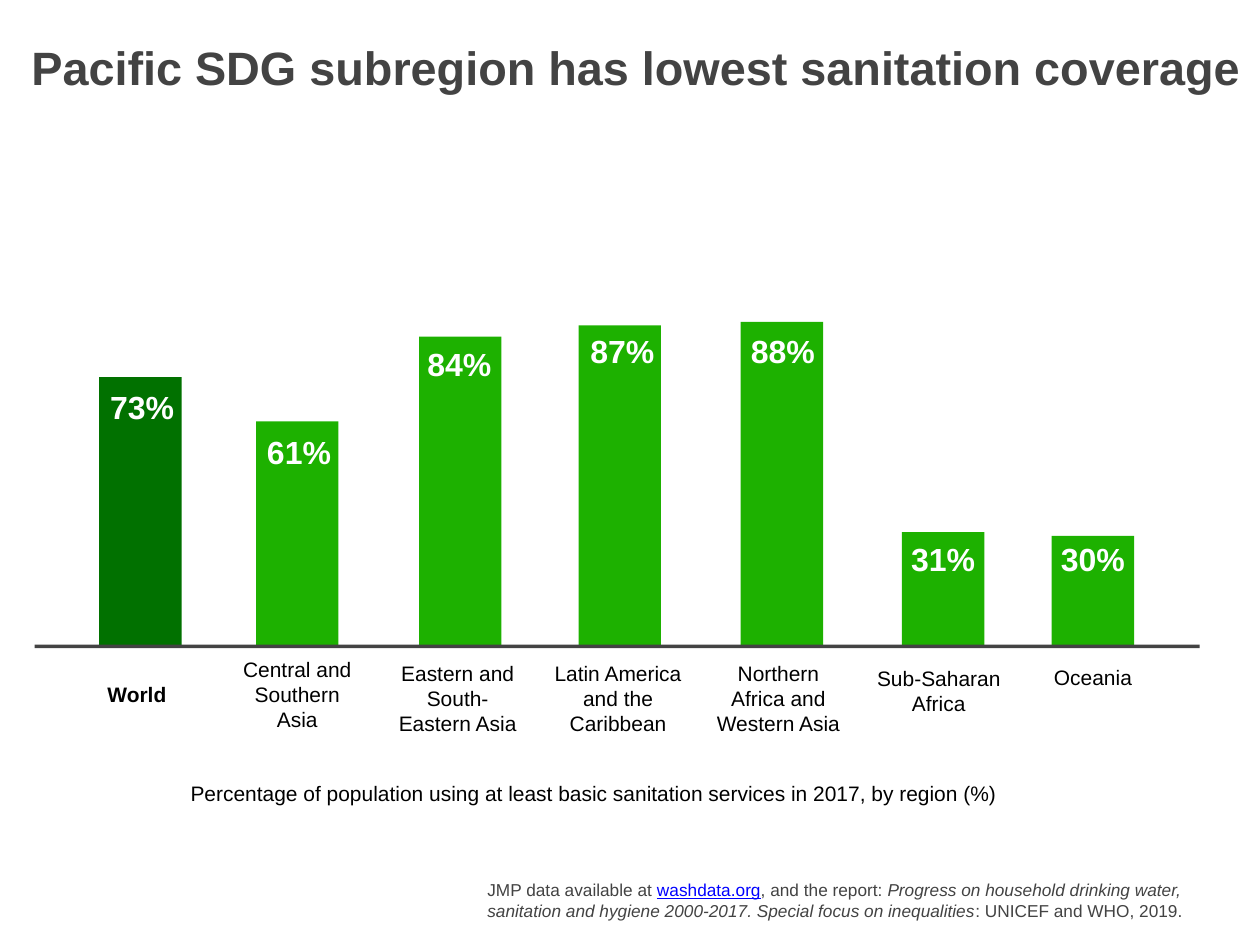
"""Build the slide on basic sanitation coverage by SDG region."""
from pptx import Presentation
from pptx.dml.color import RGBColor
from pptx.enum.shapes import MSO_SHAPE
from pptx.enum.text import MSO_ANCHOR, MSO_AUTO_SIZE, PP_ALIGN
from pptx.util import Inches, Pt

GREY = "434343"
BASELINE = 7.3
BAR_WIDTH = 0.93
VALUE_WIDTH = 0.89
INCHES_PER_PERCENT = 1 / 24


def write(box, runs, size, color, bold=False, align=PP_ALIGN.CENTER, wrap=True):
    frame = box.text_frame
    frame.auto_size = MSO_AUTO_SIZE.NONE
    frame.word_wrap = wrap
    frame.vertical_anchor = MSO_ANCHOR.MIDDLE
    frame.margin_left = frame.margin_right = Inches(0.06)
    frame.margin_top = frame.margin_bottom = Inches(0.06)
    paragraph = frame.paragraphs[0]
    paragraph.alignment = align
    paragraph.font.name = "Arial"
    paragraph.font.size = Pt(size)
    paragraph.font.bold = bold
    paragraph.font.color.rgb = RGBColor.from_string(color)
    for text in runs:
        paragraph.add_run().text = text
    return paragraph.runs


def add_block(left, top, width, height, color):
    block = slide.shapes.add_shape(
        MSO_SHAPE.RECTANGLE, Inches(left), Inches(top), Inches(width), Inches(height))
    block.shadow.inherit = False
    block.fill.solid()
    block.fill.fore_color.rgb = RGBColor.from_string(color)
    block.line.fill.background()


presentation = Presentation()
presentation.slide_width = Inches(14.22)
presentation.slide_height = Inches(10.67)
slide = presentation.slides.add_slide(presentation.slide_layouts[5])

title = slide.shapes.title
title.left, title.top = Inches(0.24), Inches(0.39)
title.width, title.height = Inches(13.88), Inches(0.73)
write(title, ["Pacific SDG subregion has lowest sanitation coverage"], 38, GREY, bold=True)

regions = [
    ("World", 73, 1.12, (1.16, 4.32), (0.82, 7.64, 1.45, 0.4)),
    ("Central and Southern Asia", 61, 2.89, (2.93, 4.82), (2.63, 7.37, 1.45, 0.94)),
    ("Eastern and South-Eastern Asia", 84, 4.73, (4.74, 3.83), (4.44, 7.41, 1.45, 0.94)),
    ("Latin America and the Caribbean", 87, 6.53, (6.58, 3.68), (6.17, 7.41, 1.61, 0.94)),
    ("Northern Africa and Western Asia", 88, 8.36, (8.39, 3.68), (7.98, 7.41, 1.61, 0.94)),
    ("Sub-Saharan Africa", 31, 10.18, (10.2, 6.03), (9.79, 7.47, 1.61, 0.66)),
    ("Oceania", 30, 11.87, (11.89, 6.03), (11.53, 7.45, 1.61, 0.38)),
]
for region, percent, bar_left, value_corner, name_area in regions:
    is_world = region == "World"
    bar_height = percent * INCHES_PER_PERCENT
    add_block(bar_left, BASELINE - bar_height, BAR_WIDTH, bar_height,
              "017100" if is_world else "1DB100")
    value = slide.shapes.add_textbox(
        *map(Inches, value_corner), Inches(VALUE_WIDTH), Inches(0.55))
    write(value, [f"{percent}%"], 26, "FFFFFF", bold=True, wrap=False)
    name = slide.shapes.add_textbox(*map(Inches, name_area))
    write(name, [region], 17, "000000", bold=is_world)

add_block(0.39, BASELINE - 0.02, 13.15, 0.04, GREY)

caption = slide.shapes.add_textbox(Inches(2.09), Inches(8.76), Inches(12.59), Inches(0.38))
write(caption,
      ["Percentage of population using at least basic sanitation services in 2017, by region (%)"],
      17, "000000", align=PP_ALIGN.LEFT)

source = slide.shapes.add_textbox(Inches(5.44), Inches(9.89), Inches(8.27), Inches(0.55))
intro, website, joiner, report, publisher = write(source, [
    "JMP data available at ",
    "washdata.org",
    ", and the report: ",
    "Progress on household drinking water, sanitation and hygiene 2000-2017. "
    "Special focus on inequalities",
    ": UNICEF and WHO, 2019.",
], 14, GREY, align=PP_ALIGN.LEFT)
website.font.color.rgb = RGBColor.from_string("0000FF")
website.font.underline = True
report.font.italic = True

presentation.save("out.pptx")
